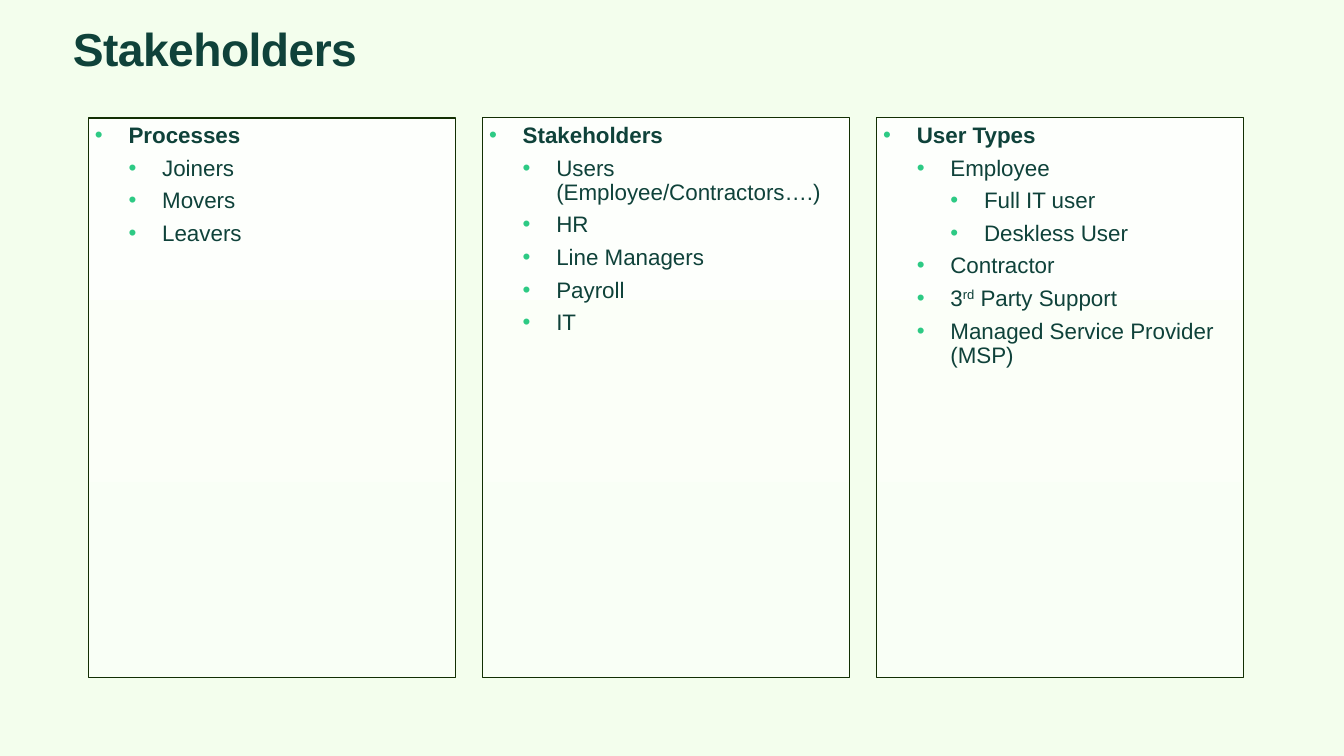
from copy import deepcopy

from lxml import etree
from pptx import Presentation
from pptx.dml.color import RGBColor
from pptx.enum.shapes import MSO_SHAPE
from pptx.enum.text import MSO_ANCHOR, PP_ALIGN
from pptx.oxml.ns import qn
from pptx.util import Pt

RECTANGLE = MSO_SHAPE.RECTANGLE
TOP = MSO_ANCHOR.TOP
LEFT = PP_ALIGN.LEFT

COLORS = {
    "background": "F3FEED",
    "text": "0F423A",
    "bullet": "2DCA84",
    "outline": "122F03",
}
PANEL_GRADIENT = [(0, "F9FFF6"), (0.35, "FBFFF8"), (1, "FDFFFC")]

# Panel grid and list steps, in points
PANEL_LEFT, PANEL_TOP = 63.36, 84.24
PANEL_WIDTH, PANEL_HEIGHT = 262.08, 399.6
PANEL_PITCH = 281.52
INDENT = 24
INSET = 4.5

# Each panel: outline width, heading, then (level, text pieces)
PANELS = [
    (1, "Processes", [(1, ["Joiners"]), (1, ["Movers"]), (1, ["Leavers"])]),
    (0.75, "Stakeholders", [
        (1, ["Users (Employee/Contractors….)"]),
        (1, ["HR"]),
        (1, ["Line Managers"]),
        (1, ["Payroll"]),
        (1, ["IT"]),
    ]),
    (0.75, "User Types", [
        (1, ["Employee"]),
        (2, ["Full IT user"]),
        (2, ["Deskless User"]),
        (1, ["Contractor"]),
        # The second piece is raised
        (1, ["3", "rd", " Party Support"]),
        (1, ["Managed Service Provider (MSP)"]),
    ]),
]


def apply_format(target, values):
    for name, value in values.items():
        setattr(target, name, value)


def prepare_frame(frame):
    apply_format(frame, {
        "word_wrap": True,
        "vertical_anchor": TOP,
        "margin_left": Pt(INSET),
        "margin_right": Pt(INSET),
        "margin_top": Pt(INSET),
        "margin_bottom": Pt(INSET),
    })


def add_span(para, text, size, bold):
    span = para.add_run()
    span.text = text
    apply_format(span.font, {"name": "Arial", "size": Pt(size), "bold": bold})
    span.font.color.rgb = RGBColor.from_string(COLORS["text"])
    return span


def add_bullet(para, level):
    properties = para._p.get_or_add_pPr()
    properties.set("marL", str(Pt(INDENT * (level + 1))))
    properties.set("indent", str(-Pt(INDENT)))
    color = etree.SubElement(properties, qn("a:buClr"))
    etree.SubElement(color, qn("a:srgbClr"), val=COLORS["bullet"])
    etree.SubElement(properties, qn("a:buFont"), typeface="Arial")
    etree.SubElement(properties, qn("a:buChar"), char="•")


def add_item(para, level, pieces, space_before):
    add_bullet(para, level)
    apply_format(para, {
        "level": level,
        "alignment": LEFT,
        "line_spacing": 0.9,
        "space_before": Pt(space_before),
    })
    for index, piece in enumerate(pieces):
        span = add_span(para, piece, 16, level == 0)
        if index == 1:
            span.font._element.set("baseline", "30000")


def fill_with_gradient(box):
    box.fill.gradient()
    box.fill.gradient_angle = 90
    # The default gradient has two stops; add the middle one
    stop_list = box._element.spPr.find(qn("a:gradFill")).find(qn("a:gsLst"))
    stop_list.insert(1, deepcopy(stop_list[0]))
    for stop, (position, color) in zip(box.fill.gradient_stops, PANEL_GRADIENT):
        stop.position = position
        stop.color.rgb = RGBColor.from_string(color)


def add_panel(page, column, outline_width, heading, items):
    box = page.shapes.add_shape(
        RECTANGLE, Pt(PANEL_LEFT + column * PANEL_PITCH), Pt(PANEL_TOP),
        Pt(PANEL_WIDTH), Pt(PANEL_HEIGHT))
    box.shadow.inherit = False
    fill_with_gradient(box)
    box.line.color.rgb = RGBColor.from_string(COLORS["outline"])
    box.line.width = Pt(outline_width)

    frame = box.text_frame
    prepare_frame(frame)
    add_item(frame.paragraphs[0], 0, [heading], 0)
    for level, pieces in items:
        add_item(frame.add_paragraph(), level, pieces, 6)


def add_title(page, text):
    title = page.shapes.title
    apply_format(title, {
        "left": Pt(47.52), "top": Pt(18), "width": Pt(864.72), "height": Pt(56.16),
    })
    prepare_frame(title.text_frame)
    para = title.text_frame.paragraphs[0]
    apply_format(para, {"alignment": LEFT, "line_spacing": 0.8})
    span = add_span(para, text, 33, True)
    span.font._element.set("spc", "-40")


def main():
    deck = Presentation()
    deck.slide_width, deck.slide_height = Pt(960), Pt(540)
    page = deck.slides.add_slide(deck.slide_layouts[5])
    page.background.fill.solid()
    page.background.fill.fore_color.rgb = RGBColor.from_string(COLORS["background"])

    # Title
    add_title(page, "Stakeholders")

    # Three list panels
    for column, (outline_width, heading, items) in enumerate(PANELS):
        add_panel(page, column, outline_width, heading, items)

    deck.save("out.pptx")


if __name__ == "__main__":
    main()
